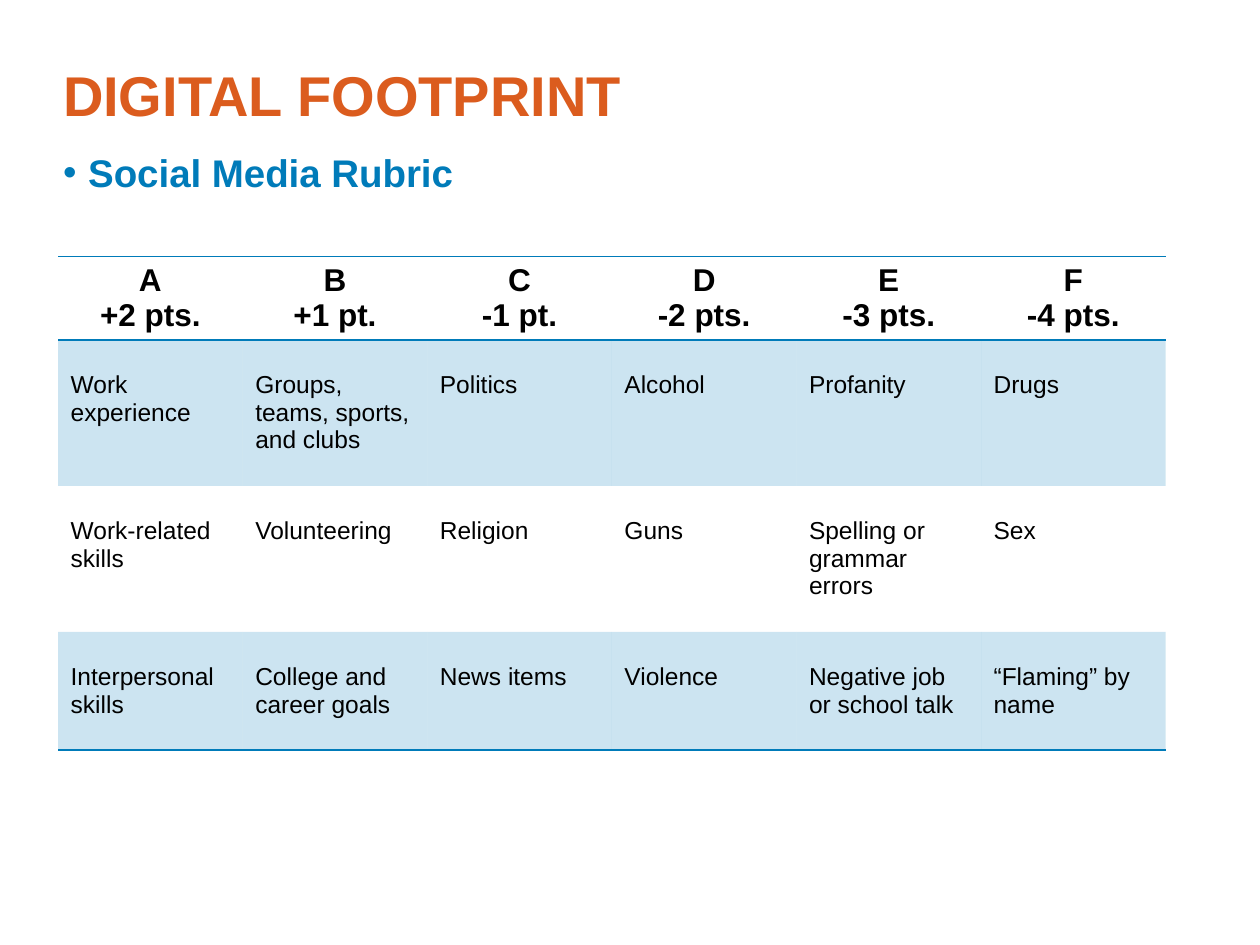
from lxml import etree
from pptx import Presentation
from pptx.dml.color import RGBColor
from pptx.enum.text import MSO_ANCHOR, MSO_AUTO_SIZE, PP_ALIGN
from pptx.oxml.ns import qn
from pptx.util import Pt

LEFT, CENTER = PP_ALIGN.LEFT, PP_ALIGN.CENTER
TOP, MIDDLE = MSO_ANCHOR.TOP, MSO_ANCHOR.MIDDLE
NO_FIT = MSO_AUTO_SIZE.NONE
ORANGE, BLUE, BLACK = "DB5C1E", "007BB9", "000000"
PLAIN_STYLE = "{2D5ABB26-0587-4C30-8999-92F81FD0307C}"

HEADS = ["A\n+2 pts.", "B\n+1 pt.", "C\n-1 pt.",
         "D\n-2 pts.", "E\n-3 pts.", "F\n-4 pts."]
ROWS = [
    ["Work experience", "Groups, teams, sports, and clubs", "Politics",
     "Alcohol", "Profanity", "Drugs"],
    ["Work-related skills", "Volunteering", "Religion",
     "Guns", "Spelling or grammar errors", "Sex"],
    ["Interpersonal skills", "College and career goals", "News items",
     "Violence", "Negative job or school talk", "“Flaming” by name"],
]
HEIGHTS = [47.7, 83.4, 83.4, 67.4]
COL = 105.5


def paint(hue):
    return RGBColor.from_string(hue)


def write(frame, text, size=14, hue=BLACK, bold=False, align=LEFT):
    para = frame.paragraphs[0]
    para.text = text
    para.alignment = align
    for run in para.runs:
        font = run.font
        font.name, font.size, font.bold = "Arial", Pt(size), bold
        font.color.rgb = paint(hue)
    return para


def place(shape, left, top, width, height, anchor):
    shape.left, shape.top = Pt(left), Pt(top)
    shape.width, shape.height = Pt(width), Pt(height)
    frame = shape.text_frame
    frame.margin_left = frame.margin_right = 0
    frame.margin_top = frame.margin_bottom = 0
    frame.vertical_anchor = anchor
    frame.auto_size = NO_FIT
    frame.word_wrap = True
    return frame


def bullet(para, indent):
    props = para._p.get_or_add_pPr()
    props.set("marL", str(Pt(indent)))
    props.set("indent", str(-Pt(indent)))
    etree.SubElement(props, qn("a:buFont"), typeface="Arial")
    etree.SubElement(props, qn("a:buChar"), char="•")


def border(cell, sides):
    props = cell._tc.get_or_add_tcPr()
    # Border lines must come before the cell fill
    for spot, side in enumerate(sides):
        line = etree.Element(qn("a:ln" + side), w=str(Pt(1)))
        fill = etree.SubElement(line, qn("a:solidFill"))
        etree.SubElement(fill, qn("a:srgbClr"), val=BLUE)
        props.insert(spot, line)


def tint(cell):
    cell.fill.solid()
    cell.fill.fore_color.rgb = paint(BLUE)
    tone = cell._tc.tcPr.find(".//" + qn("a:srgbClr"))
    etree.SubElement(tone, qn("a:alpha"), val="20000")


def rubric(slide):
    grid = [HEADS] + ROWS
    table = slide.shapes.add_table(
        len(grid), len(HEADS), Pt(33.2), Pt(146.6),
        Pt(COL * len(HEADS)), Pt(sum(HEIGHTS))).table
    table._tbl.tblPr.find(qn("a:tableStyleId")).text = PLAIN_STYLE
    for col in table.columns:
        col.width = Pt(COL)
    for r, texts in enumerate(grid):
        table.rows[r].height = Pt(HEIGHTS[r])
        for c, text in enumerate(texts):
            cell = table.cell(r, c)
            if r % 2:
                tint(cell)
            else:
                cell.fill.background()
            if r == 0:
                write(cell.text_frame, text, size=18, bold=True, align=CENTER)
                border(cell, "TB")
                continue
            write(cell.text_frame, text)
            cell.margin_top = cell.margin_bottom = Pt(18)
            if r == len(ROWS):
                border(cell, "B")


def main():
    deck = Presentation()
    deck.slide_width, deck.slide_height = Pt(720), Pt(540)
    slide = deck.slides.add_slide(deck.slide_layouts[1])

    # Title
    frame = place(slide.shapes.title, 36, 18, 594, 72, MIDDLE)
    write(frame, "DIGITAL FOOTPRINT", size=32, hue=ORANGE, bold=True)

    # Subject line
    frame = place(slide.placeholders[1], 36, 83.5, 648, 432, TOP)
    para = write(frame, "Social Media Rubric", size=22, hue=BLUE, bold=True)
    para.line_spacing = Pt(28)
    para.space_before = Pt(0)
    para.space_after = Pt(3)
    bullet(para, 14.4)

    # Scoring table
    rubric(slide)
    deck.save("out.pptx")


if __name__ == "__main__":
    main()
